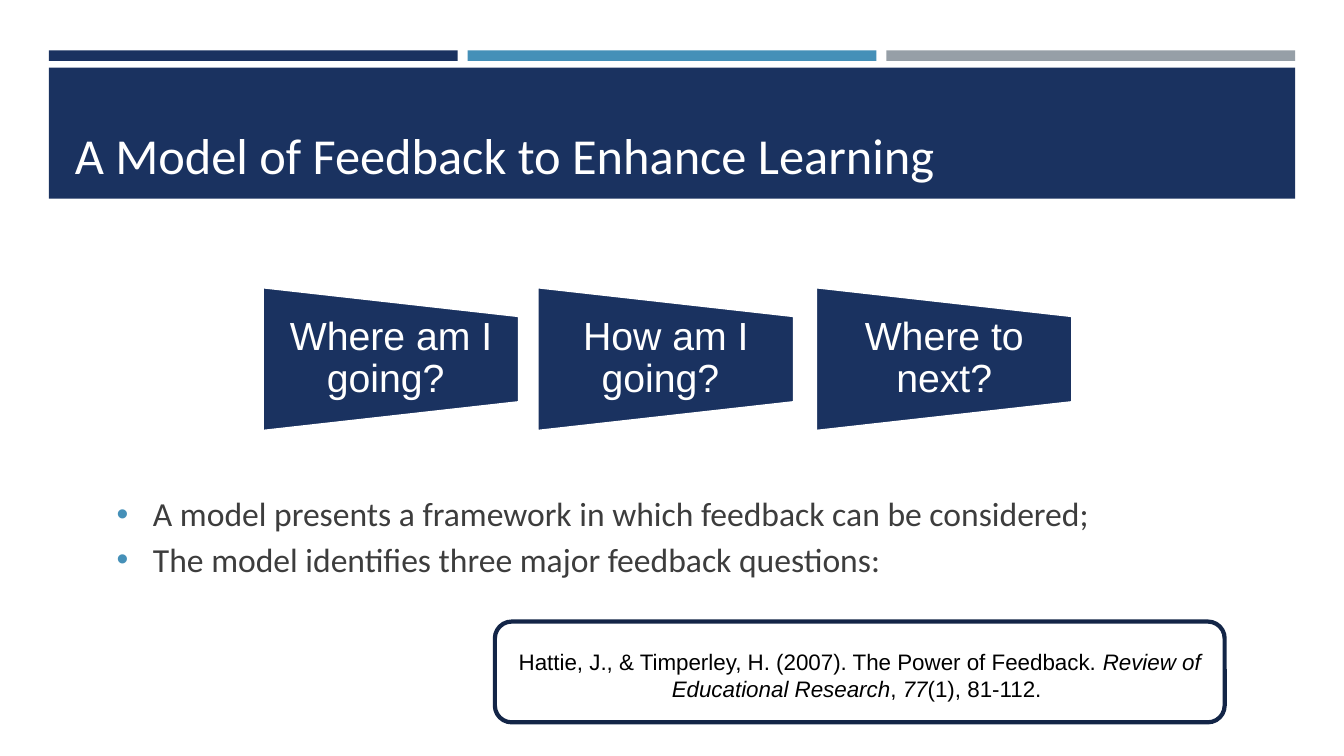
from lxml import etree
from pptx import Presentation
from pptx import util as u
from pptx.dml.color import RGBColor
from pptx.enum import shapes, text
from pptx.oxml.ns import qn

NAVY, BLUE, GREY = "1A3260", "4590B8", "969FA7"
WHITE, BLACK, CHARCOAL, OUTLINE = "FFFFFF", "000000", "3D3D3D", "132547"
PREFIX_SPACE = "\u00a0"


def colour(hex_string):
    return RGBColor.from_string(hex_string)


def place(item, box):
    item.left, item.top, item.width, item.height = (u.Pt(length) for length in box)


def add_block(slide, kind, box, fill=None, line=None, line_width=0):
    shape = slide.shapes.add_shape(kind, *(u.Pt(length) for length in box))
    shape.shadow.inherit = False
    if fill:
        shape.fill.solid()
        shape.fill.fore_color.rgb = colour(fill)
    else:
        shape.fill.background()
    if line:
        shape.line.color.rgb = colour(line)
        shape.line.width = u.Pt(line_width)
    else:
        shape.line.fill.background()
    return shape


def write(shape, paragraphs, size, font, ink, align=text.PP_ALIGN.LEFT,
          anchor=text.MSO_ANCHOR.MIDDLE, insets=(7.2, 3.6, 7.2, 3.6),
          line_spacing=None, space_before=0):
    """Fill a shape with paragraphs, each a list of (words, italic) runs."""
    frame = shape.text_frame
    frame.word_wrap = True
    frame.auto_size = text.MSO_AUTO_SIZE.NONE
    frame.vertical_anchor = anchor
    (frame.margin_left, frame.margin_top,
     frame.margin_right, frame.margin_bottom) = (u.Pt(inset) for inset in insets)
    for index, runs in enumerate(paragraphs):
        paragraph = frame.add_paragraph() if index else frame.paragraphs[0]
        paragraph.alignment = align
        paragraph.space_before = u.Pt(space_before)
        if line_spacing:
            paragraph.line_spacing = line_spacing
        for words, italic in runs:
            run = paragraph.add_run()
            run.text = words
            run.font.size = u.Pt(size)
            run.font.name = font
            run.font.italic = italic
            run.font.color.rgb = colour(ink)


def add_bullet(paragraph, ink, margin, indent):
    properties = paragraph._p.get_or_add_pPr()
    properties.set("marL", str(u.Pt(margin)))
    properties.set("indent", str(u.Pt(indent)))
    bullet_colour = etree.SubElement(properties, qn("a:buClr"))
    etree.SubElement(bullet_colour, qn("a:srgbClr"), val=ink)
    etree.SubElement(properties, qn("a:buFont"), typeface="Arial")
    etree.SubElement(properties, qn("a:buChar"), char="•")


def build_header(slide, box):
    left, top, width, height = box
    gap = 7.2
    bar_width = (width - 2 * gap) / 3
    for index, fill in enumerate((NAVY, BLUE, GREY)):
        bar = (left + index * (bar_width + gap), top, bar_width, 7.5)
        add_block(slide, shapes.MSO_SHAPE.RECTANGLE, bar, fill)
    band_top = top + 12.4
    band = (left, band_top, width, height - 12.4)
    add_block(slide, shapes.MSO_SHAPE.RECTANGLE, band, NAVY)
    title = slide.shapes.title
    place(title, (left + 11.3, band_top + 7, width - 22.4, 80))
    write(title, [[("A Model of Feedback to Enhance Learning", False)]],
          36, "Calibri", WHITE, anchor=text.MSO_ANCHOR.BOTTOM)
    slide.shapes._spTree.append(title._element)  # bring in front of the band


def build_question(slide, box, question):
    left, top, width, height = box
    centre_x, centre_y = left + width / 2, top + height / 2
    upright = (centre_x - height / 2, centre_y - width / 2, height, width)
    trapezoid = add_block(slide, shapes.MSO_SHAPE.FLOWCHART_MANUAL_OPERATION,
                          upright, NAVY, WHITE, 2)
    trapezoid.rotation = 270
    label_box = (left, top + height / 5, width, height * 3 / 5)
    label = slide.shapes.add_textbox(*(u.Pt(length) for length in label_box))
    write(label, [[(question, False)]], 28, "Arial", WHITE,
          align=text.PP_ALIGN.CENTER, insets=(13.7, 0, 13.7, 0), line_spacing=0.9)


def build_points(slide, box):
    points = ["A model presents a framework in which feedback can be considered;",
              "The model identifies three major feedback questions:"]
    body = slide.shapes.add_textbox(*(u.Pt(length) for length in box))
    write(body, [[(point, False)] for point in points], 24, "Calibri", CHARCOAL,
          space_before=3.6)
    for paragraph in body.text_frame.paragraphs:
        add_bullet(paragraph, BLUE, 36, -26)


def build_citation(slide, box):
    frame = add_block(slide, shapes.MSO_SHAPE.ROUNDED_RECTANGLE, box,
                      line=OUTLINE, line_width=3)
    runs = [("Hattie, J., & Timperley, H. (2007). The Power of Feedback." + PREFIX_SPACE, False),
            ("Review of Educational Research", True),
            ("," + PREFIX_SPACE, False), ("77", True), ("(1), 81-112. ", False)]
    write(frame, [runs], 16, "Arial", BLACK, align=text.PP_ALIGN.CENTER,
          insets=(7.2, 8.4, 7.2, 3.6))


def main():
    presentation = Presentation()
    presentation.slide_width, presentation.slide_height = u.Pt(960), u.Pt(540)
    slide = presentation.slides.add_slide(presentation.slide_layouts[5])
    build_header(slide, (34.9, 36, 890.3, 106))
    questions = {187.5: "Where am I going? ", 383.8: "How am I going? ",
                 582.7: "Where to next?"}
    for left, question in questions.items():
        build_question(slide, (left, 205, 183.5, 103), question)
    build_points(slide, (66.2, 343, 828, 80))
    build_citation(slide, (353.5, 444, 521.3, 72))
    presentation.save("out.pptx")


if __name__ == "__main__":
    main()
